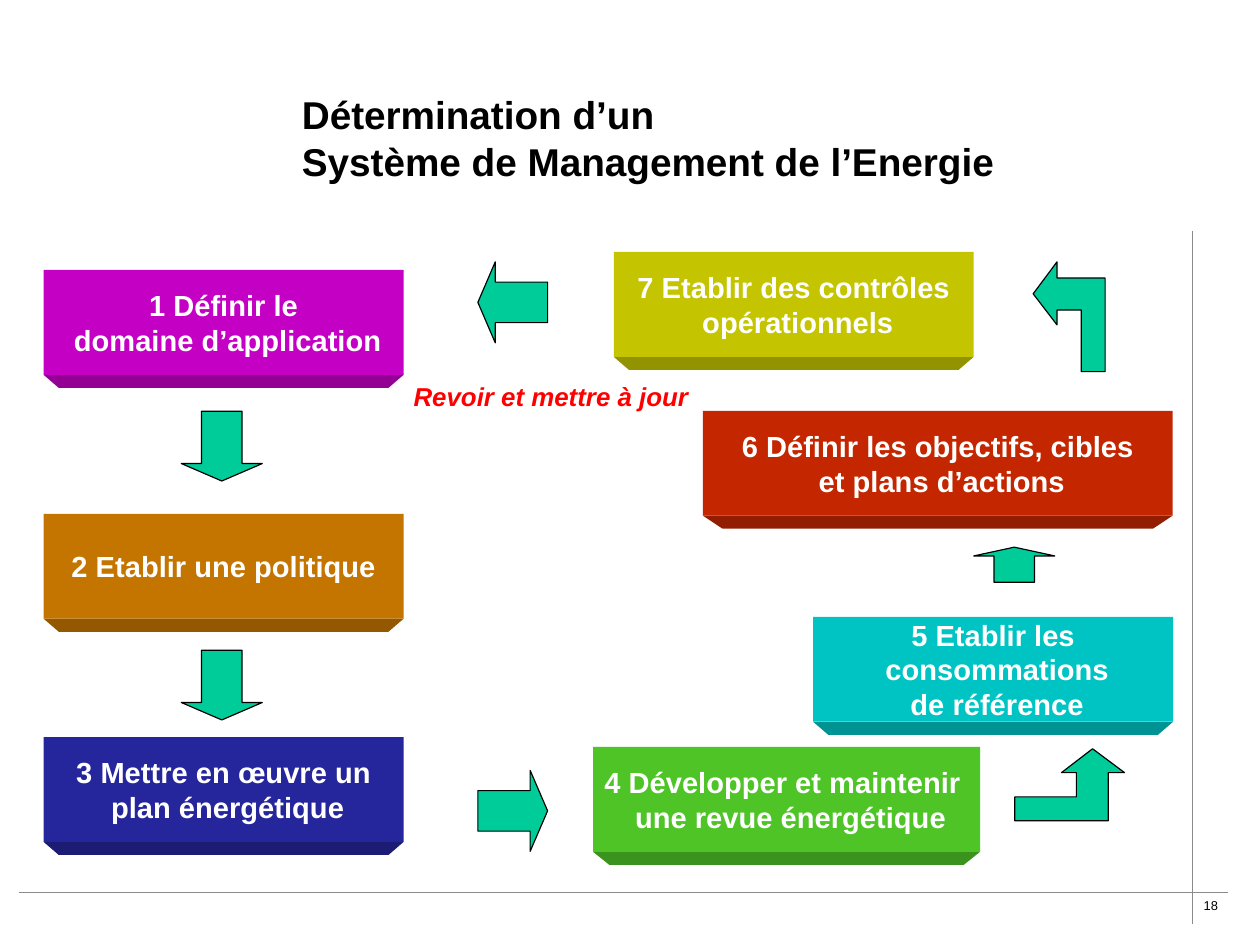
from dataclasses import dataclass

from lxml import etree
from pptx import Presentation
from pptx import util as u
from pptx.dml.color import RGBColor
from pptx.enum import shapes, text
from pptx.oxml import ns

# Content (lengths in cm)
TITLE = ["Détermination d’un ", "Système de Management de l’Energie"]
REVIEW = "Revoir et mettre à jour"
PAGE_NUMBER = "18"

# Steps: left, top, width, colour, lines
STEPS = [
    (0.97, 6.0, 8.0, "C400C4", ["1 Définir le", " domaine d’application"]),
    (0.97, 11.42, 8.0, "C47500", ["2 Etablir une politique"]),
    (0.97, 16.38, 8.0, "26269C", ["3 Mettre en œuvre un", " plan énergétique"]),
    (13.18, 16.6, 8.6, "4EC427",
     ["4 Développer et maintenir ", " une revue énergétique"]),
    (18.07, 13.71, 8.0, "00C4C4",
     ["5 Etablir les", " consommations", " de référence"]),
    (15.62, 9.13, 10.44, "C42700",
     ["6 Définir les objectifs, cibles", " et plans d’actions"]),
    (13.64, 5.6, 8.0, "C4C400", ["7 Etablir des contrôles", " opérationnels"]),
]

# Straight arrows: preset, left, top, width, height
ARROWS = [
    ("DOWN_ARROW", 4.03, 9.14, 1.8, 1.55),
    ("DOWN_ARROW", 4.03, 14.45, 1.8, 1.55),
    ("RIGHT_ARROW", 10.62, 17.12, 1.55, 1.8),
    ("LEFT_ARROW", 10.62, 5.82, 1.55, 1.8),
    ("UP_ARROW", 21.64, 12.16, 1.8, 0.78),
]

# Bent arrow around its centre, pointing up
ELBOW = [(0.51, -0.8), (-0.18, -0.27), (0.15, -0.27), (0.15, 0.27),
         (-1.22, 0.27), (-1.22, 0.8), (0.86, 0.8), (0.86, -0.27),
         (1.22, -0.27)]
RULES = [(0.43, 19.83, 27.3, 19.83), (26.5, 20.53, 26.5, 5.14)]

FACE_HEIGHT = 2.33
BEVEL_HEIGHT = 0.29
BEVEL_INSET = 0.042  # share of the step width
BEVEL_SHADE = 0.75


@dataclass
class Theme:
    font: str = "Arial"
    ink: str = "000000"
    on_step: str = "FFFFFF"
    accent: str = "FF0000"
    arrow: str = "00CC99"
    rule: str = "8B8B8B"
    title_size: float = 24.4
    step_size: float = 18.3
    review_size: float = 16.3
    number_size: float = 8.1


theme = Theme()
deck = Presentation()
deck.slide_width, deck.slide_height = u.Cm(28), u.Cm(21)
page = deck.slides.add_slide(deck.slide_layouts[6])


def write(box, lines, size, color, bold=True, italic=False, wrap=False,
          align=text.PP_ALIGN.LEFT, anchor=text.MSO_ANCHOR.TOP):
    frame = box.text_frame
    frame.word_wrap = wrap
    frame.vertical_anchor = anchor
    for index, line in enumerate(lines):
        para = frame.add_paragraph() if index else frame.paragraphs[0]
        para.alignment = align
        span = para.add_run()
        span.text = line
        font = span.font
        font.name, font.size = theme.font, u.Pt(size)
        font.bold, font.italic = bold, italic
        font.color.rgb = RGBColor.from_string(color)


def add_text(left, top, width, height, lines, **style):
    box = page.shapes.add_textbox(*map(u.Cm, (left, top, width, height)))
    write(box, lines, **style)


def paint(shape, fill, line=None):
    shape.shadow.inherit = False
    shape.fill.solid()
    shape.fill.fore_color.rgb = RGBColor.from_string(fill)
    if line:
        shape.line.color.rgb = RGBColor.from_string(line)
        shape.line.width = u.Pt(0.75)
    else:
        shape.line.fill.background()


def add_outline(points):
    corners = [(u.Cm(x), u.Cm(y)) for x, y in points]
    builder = page.shapes.build_freeform(*corners[0])
    builder.add_line_segments(corners[1:], close=True)
    return builder.convert_to_shape()


def darken(color):
    return "".join(f"{round(part * BEVEL_SHADE):02X}"
                   for part in RGBColor.from_string(color))


def add_step(left, top, width, color, lines):
    right, edge = left + width, top + FACE_HEIGHT
    inset, foot = width * BEVEL_INSET, edge + BEVEL_HEIGHT
    bevel = add_outline([(left, edge), (right, edge),
                         (right - inset, foot), (left + inset, foot)])
    paint(bevel, darken(color))
    face = page.shapes.add_shape(shapes.MSO_SHAPE.RECTANGLE,
                                 *map(u.Cm, (left, top, width, FACE_HEIGHT)))
    paint(face, color)
    write(face, lines, size=theme.step_size, color=theme.on_step,
          align=text.PP_ALIGN.CENTER, anchor=text.MSO_ANCHOR.MIDDLE)


# Frame rules and page number
for ends in RULES:
    rule = page.shapes.add_connector(shapes.MSO_CONNECTOR.STRAIGHT,
                                     *map(u.Cm, ends))
    rule.line.color.rgb = RGBColor.from_string(theme.rule)
    rule.line.width = u.Pt(1)
    etree.SubElement(rule._element.spPr, ns.qn("a:effectLst"))
add_text(26.5, 19.83, 1.04, 0.6, [PAGE_NUMBER], size=theme.number_size,
         color=theme.ink, bold=False)

# Title
add_text(6.46, 1.88, 19.58, 2.36, TITLE, size=theme.title_size,
         color=theme.ink, wrap=True, anchor=text.MSO_ANCHOR.MIDDLE)

# Steps
for step in STEPS:
    add_step(*step)

# Straight arrows
for preset, *area in ARROWS:
    arrow = page.shapes.add_shape(shapes.MSO_SHAPE[preset], *map(u.Cm, area))
    arrow.adjustments[0], arrow.adjustments[1] = 0.5, 0.25
    paint(arrow, theme.arrow, theme.ink)

# Bent arrows: one points up, the other is turned a quarter to the left
turned = [(y, -x) for x, y in ELBOW]
for center_x, center_y, outline in [(23.77, 17.44, ELBOW),
                                    (23.76, 7.04, turned)]:
    bend = add_outline([(center_x + x, center_y + y) for x, y in outline])
    paint(bend, theme.arrow, theme.ink)

# Review label
add_text(8.94, 8.34, 6.68, 0.94, [REVIEW], size=theme.review_size,
         color=theme.accent, italic=True, wrap=True)

deck.save("out.pptx")
